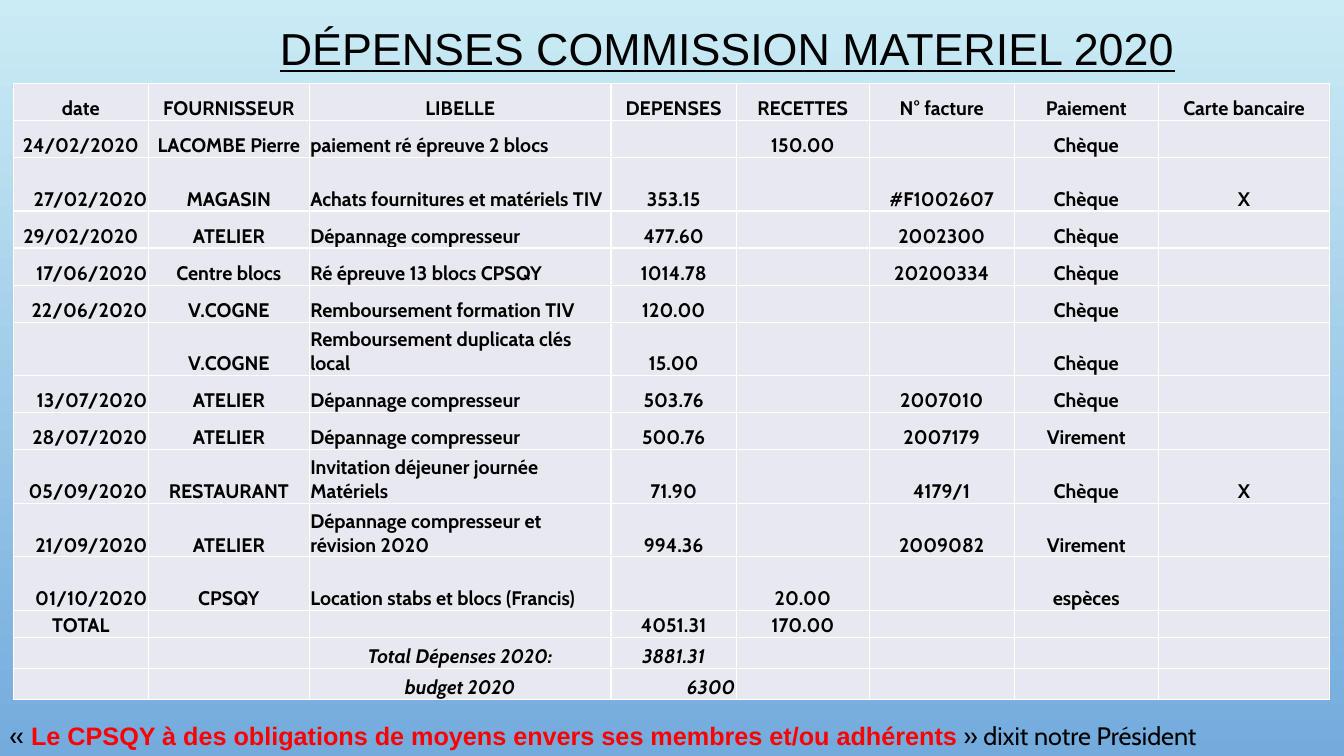
from dataclasses import dataclass

from lxml import etree
from pptx import Presentation
from pptx.dml.color import RGBColor
from pptx.enum.text import MSO_ANCHOR, MSO_AUTO_SIZE, PP_ALIGN
from pptx.oxml.ns import qn
from pptx.util import Pt

LEFT, CENTER, RIGHT = PP_ALIGN.LEFT, PP_ALIGN.CENTER, PP_ALIGN.RIGHT
MIDDLE, BOTTOM = MSO_ANCHOR.MIDDLE, MSO_ANCHOR.BOTTOM
GROW = MSO_AUTO_SIZE.SHAPE_TO_FIT_TEXT


@dataclass(frozen=True)
class Theme:
    sky: str = "CBECF5"
    sea: str = "73ABDD"
    ink: str = "000000"
    alert: str = "FF0000"
    cell: str = "E8E9F0"
    rule: str = "FFFFFF"
    head: str = "Arial"
    body: str = "Cabin"
    title: int = 32
    quote: int = 18
    grid: int = 14


WIDTHS = [96.5, 115, 215.5, 89.5, 95, 103.5, 103, 122.5]
LOW, MID, TALL = 19.5, 22, 38.25
BASE = 26.5
HEIGHTS = {2: TALL, 6: TALL, 9: TALL, 10: TALL, 11: TALL,
           12: LOW, 13: MID, 14: MID}

ROWS = [
    ["date", "FOURNISSEUR", "LIBELLE", "DEPENSES", "RECETTES",
     "N° facture", "Paiement", "Carte bancaire"],
    ["24/02/2020", "LACOMBE Pierre", "paiement ré épreuve 2 blocs",
     "", "150.00", "", "Chèque", ""],
    ["27/02/2020", "MAGASIN", "Achats fournitures et matériels TIV",
     "353.15", "", "#F1002607", "Chèque", "X"],
    ["29/02/2020", "ATELIER", "Dépannage compresseur",
     "477.60", "", "2002300", "Chèque", ""],
    ["17/06/2020", "Centre blocs", "Ré épreuve 13 blocs CPSQY",
     "1014.78", "", "20200334", "Chèque", ""],
    ["22/06/2020", "V.COGNE", "Remboursement formation TIV",
     "120.00", "", "", "Chèque", ""],
    ["", "V.COGNE", "Remboursement duplicata clés local",
     "15.00", "", "", "Chèque", ""],
    ["13/07/2020", "ATELIER", "Dépannage compresseur",
     "503.76", "", "2007010", "Chèque", ""],
    ["28/07/2020", "ATELIER", "Dépannage compresseur",
     "500.76", "", "2007179", "Virement", ""],
    ["05/09/2020", "RESTAURANT", "Invitation déjeuner journée Matériels",
     "71.90", "", "4179/1", "Chèque", "X"],
    ["21/09/2020", "ATELIER", "Dépannage compresseur et révision 2020",
     "994.36", "", "2009082", "Virement", ""],
    ["01/10/2020", "CPSQY", "Location stabs et blocs (Francis)",
     "", "20.00", "", "espèces", ""],
    ["TOTAL", "", "", "4051.31", "170.00", "", "", ""],
    ["", "", "Total Dépenses 2020:", "3881.31", "", "", "", ""],
    ["", "", "budget 2020", "6300", "", "", "", ""],
]
TOTAL = 12


def align(row, col):
    """Dates sit right and labels left, save in headings and totals."""
    if 0 < row < TOTAL:
        if col == 2:
            return LEFT
        if col == 0 and row not in (1, 3):
            return RIGHT
    return RIGHT if (row, col) == (14, 3) else CENTER


class Page:
    def __init__(self, deck, theme):
        self.theme = theme
        self.slide = deck.slides.add_slide(deck.slide_layouts[6])

    def back(self):
        fill = self.slide.background.fill
        fill.gradient()
        fill.gradient_angle = 270
        tones = (self.theme.sky, self.theme.sea)
        for stop, place, tone in zip(fill.gradient_stops, (0, 1), tones):
            stop.position = place
            stop.color.rgb = RGBColor.from_string(tone)

    def style(self, font, face, size, tone, bold=False):
        font.name, font.size, font.bold = face, Pt(size), bold
        font.color.rgb = RGBColor.from_string(tone)

    def box(self, x, y, w, h):
        return self.slide.shapes.add_textbox(
            Pt(x), Pt(y), Pt(w), Pt(h)).text_frame

    def title(self, text, *area):
        frame = self.box(*area)
        frame.word_wrap = True
        frame.vertical_anchor = MIDDLE
        para = frame.paragraphs[0]
        para.text = text
        para.alignment = CENTER
        para.line_spacing = 0.9
        self.style(para.font, self.theme.head, self.theme.title,
                   self.theme.ink)
        para.font.underline = True

    def quote(self, parts, *area):
        """Write one line from (text, face, tone, bold) parts."""
        frame = self.box(*area)
        frame.word_wrap = False
        frame.auto_size = GROW
        for text, face, tone, bold in parts:
            run = frame.paragraphs[0].add_run()
            run.text = text
            self.style(run.font, face, self.theme.quote, tone, bold)

    def edge(self, cell):
        props = cell._tc.get_or_add_tcPr()
        for side in ("lnL", "lnR", "lnT", "lnB"):
            line = etree.SubElement(props, qn("a:" + side), w=str(Pt(1)))
            fill = etree.SubElement(line, qn("a:solidFill"))
            etree.SubElement(fill, qn("a:srgbClr"), val=self.theme.rule)

    def cell(self, cell, text, side, slant):
        self.edge(cell)
        cell.fill.solid()
        cell.fill.fore_color.rgb = RGBColor.from_string(self.theme.cell)
        cell.margin_left = cell.margin_right = cell.margin_top = Pt(0.75)
        cell.margin_bottom = 0
        cell.vertical_anchor = BOTTOM
        para = cell.text_frame.paragraphs[0]
        para.alignment = side
        self.style(para.font, self.theme.body, self.theme.grid,
                   self.theme.ink, True)
        para.font.italic = slant
        if text:
            para.add_run().text = text
        else:
            end = etree.SubElement(para._p, qn("a:endParaRPr"))
            end.set("sz", str(self.theme.grid * 100))

    def table(self, rows, x, y):
        highs = [HEIGHTS.get(i, BASE) for i in range(len(rows))]
        grid = self.slide.shapes.add_table(
            len(rows), len(WIDTHS), Pt(x), Pt(y),
            Pt(sum(WIDTHS)), Pt(sum(highs))).table
        grid.first_row = grid.horz_banding = False
        for col, wide in zip(grid.columns, WIDTHS):
            col.width = Pt(wide)
        for i, (row, high) in enumerate(zip(rows, highs)):
            grid.rows[i].height = Pt(high)
            for j, text in enumerate(row):
                self.cell(grid.cell(i, j), text, align(i, j), i > TOTAL)


def main():
    deck = Presentation()
    deck.slide_width, deck.slide_height = Pt(960), Pt(540)
    theme = Theme()
    page = Page(deck, theme)
    page.back()
    page.title("DÉPENSES COMMISSION MATERIEL 2020", 111.5, 0, 816, 73.5)
    page.quote([
        ("«", theme.body, theme.ink, False),
        (" Le CPSQY à des obligations de moyens envers ses membres"
         " et/ou adhérents", theme.head, theme.alert, True),
        (" » dixit notre Président", theme.body, theme.ink, False),
    ], 0, 511, 898.5, 29)
    page.table(ROWS, 9.5, 59.5)
    deck.save("out.pptx")


if __name__ == "__main__":
    main()
